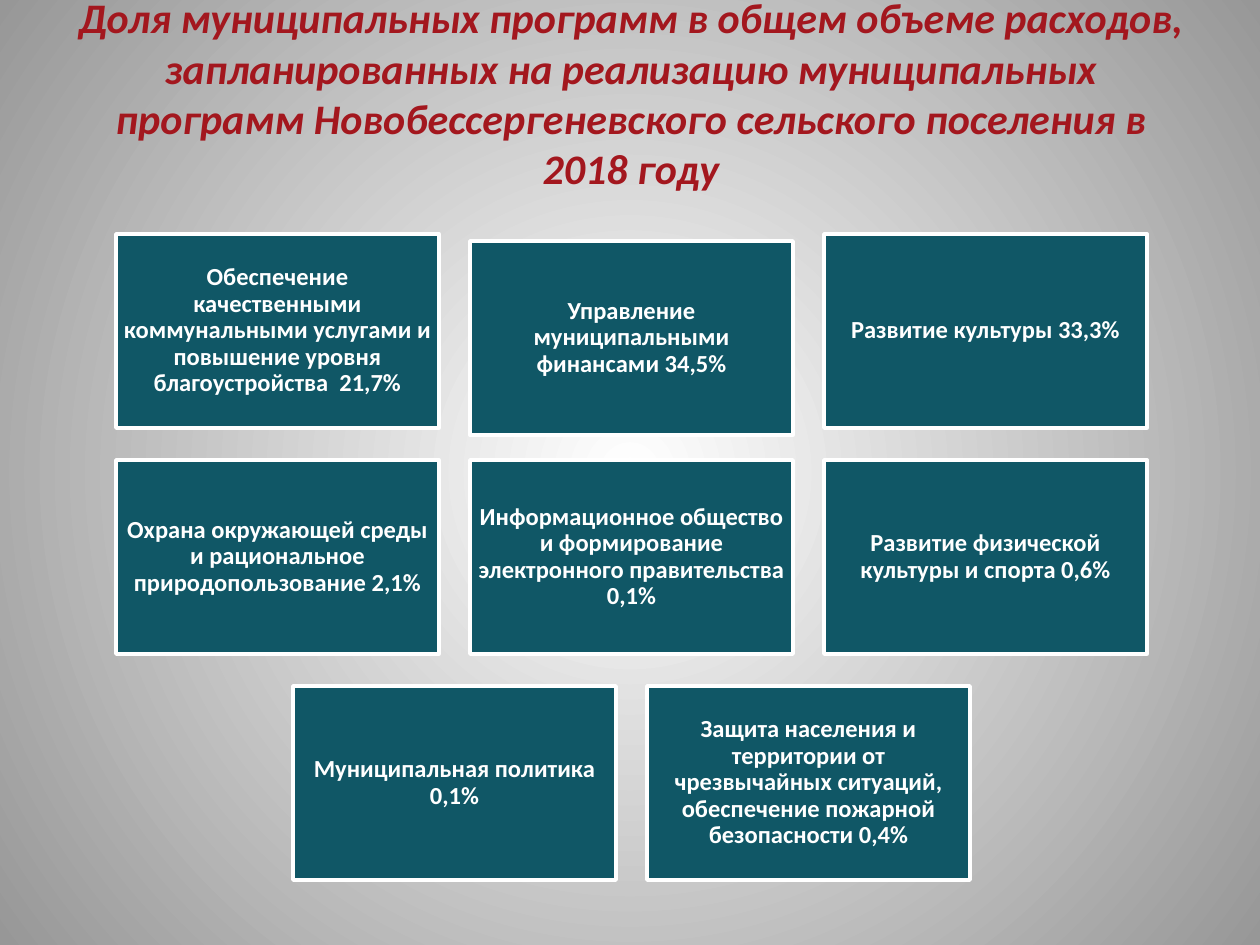
from dataclasses import dataclass

import lxml.etree
import pptx
import pptx.dml.color
import pptx.enum.shapes
import pptx.enum.text
import pptx.oxml.ns
import pptx.util

PIXEL = 914400 / 126
SLIDE_WIDTH, SLIDE_HEIGHT = 1260, 945
CARD_WIDTH, CARD_HEIGHT, CARD_GAP = 323, 194, 31
GRID_CENTER, GRID_TOP, ROW_PITCH = 631, 234, 226
CARD_INSET = 7

WHITE = pptx.dml.color.RGBColor(0xFF, 0xFF, 0xFF)
GRAY = pptx.dml.color.RGBColor(0x97, 0x97, 0x97)
TEAL = pptx.dml.color.RGBColor(0x10, 0x57, 0x66)
RED = pptx.dml.color.RGBColor(0xA3, 0x17, 0x1E)

TITLE = (
    "Доля муниципальных программ в общем объеме расходов, запланированных "
    "на реализацию муниципальных программ Новобессергеневского сельского "
    "поселения в 2018 году"
)


@dataclass
class Program:
    text: str
    drop: int = 0


PROGRAM_ROWS = [
    [
        Program("Обеспечение качественными коммунальными услугами и повышение уровня благоустройства  21,7%"),
        Program("Управление муниципальными финансами 34,5%", drop=7),
        Program("Развитие культуры 33,3%"),
    ],
    [
        Program("Охрана окружающей среды и рациональное природопользование 2,1%"),
        Program("Информационное общество и формирование электронного правительства 0,1%"),
        Program("Развитие физической культуры и спорта 0,6%"),
    ],
    [
        Program("Муниципальная политика 0,1%"),
        Program("Защита населения и территории от чрезвычайных ситуаций, обеспечение пожарной безопасности 0,4%"),
    ],
]


def px(length: int) -> pptx.util.Emu:
    return pptx.util.Emu(round(length * PIXEL))


def paint_background(slide: pptx.slide.Slide) -> None:
    fill = slide.background.fill
    fill.gradient()
    for stop, color in zip(fill.gradient_stops, (WHITE, GRAY)):
        stop.color.rgb = color
    qn = pptx.oxml.ns.qn
    gradient = slide.element.find(".//" + qn("a:gradFill"))
    gradient.remove(gradient.find(qn("a:lin")))
    circle = lxml.etree.SubElement(gradient, qn("a:path"), path="circle")
    sides = dict.fromkeys("ltrb", "50000")
    lxml.etree.SubElement(circle, qn("a:fillToRect"), **sides)


def write_text(
    shape: pptx.shapes.autoshape.Shape,
    text: str,
    size: int,
    color: pptx.dml.color.RGBColor,
    italic: bool = False,
) -> pptx.text.text._Paragraph:
    frame = shape.text_frame
    frame.word_wrap = True
    frame.vertical_anchor = pptx.enum.text.MSO_ANCHOR.MIDDLE
    paragraph = frame.paragraphs[0]
    paragraph.alignment = pptx.enum.text.PP_ALIGN.CENTER
    run = paragraph.add_run()
    run.text = text
    run.font.name = "Calibri"
    run.font.size = pptx.util.Pt(size)
    run.font.bold = True
    run.font.italic = italic
    run.font.color.rgb = color
    return paragraph


def draw_card(slide: pptx.slide.Slide, program: Program, left: int, top: int) -> None:
    card = slide.shapes.add_shape(
        pptx.enum.shapes.MSO_SHAPE.RECTANGLE,
        px(left), px(top + program.drop), px(CARD_WIDTH), px(CARD_HEIGHT),
    )
    card.shadow.inherit = False
    card.fill.solid()
    card.fill.fore_color.rgb = TEAL
    card.line.color.rgb = WHITE
    card.line.width = pptx.util.Pt(2)
    frame = card.text_frame
    frame.margin_left = frame.margin_right = px(CARD_INSET)
    frame.margin_top = frame.margin_bottom = px(CARD_INSET)
    paragraph = write_text(card, program.text, 14, WHITE)
    paragraph.line_spacing = 0.9
    paragraph.space_after = pptx.util.Pt(5)


def draw_row(slide: pptx.slide.Slide, programs: list[Program], top: int) -> None:
    pitch = CARD_WIDTH + CARD_GAP
    left = GRID_CENTER - (len(programs) * pitch - CARD_GAP) // 2
    for column, program in enumerate(programs):
        draw_card(slide, program, left + column * pitch, top)


def main() -> None:
    presentation = pptx.Presentation()
    presentation.slide_width = px(SLIDE_WIDTH)
    presentation.slide_height = px(SLIDE_HEIGHT)
    slide = presentation.slides.add_slide(presentation.slide_layouts[6])
    paint_background(slide)
    title = slide.shapes.add_textbox(px(64), px(0), px(1134), px(185))
    write_text(title, TITLE, 24, RED, italic=True)
    for row, programs in enumerate(PROGRAM_ROWS):
        draw_row(slide, programs, GRID_TOP + row * ROW_PITCH)
    presentation.save("out.pptx")


if __name__ == "__main__":
    main()
